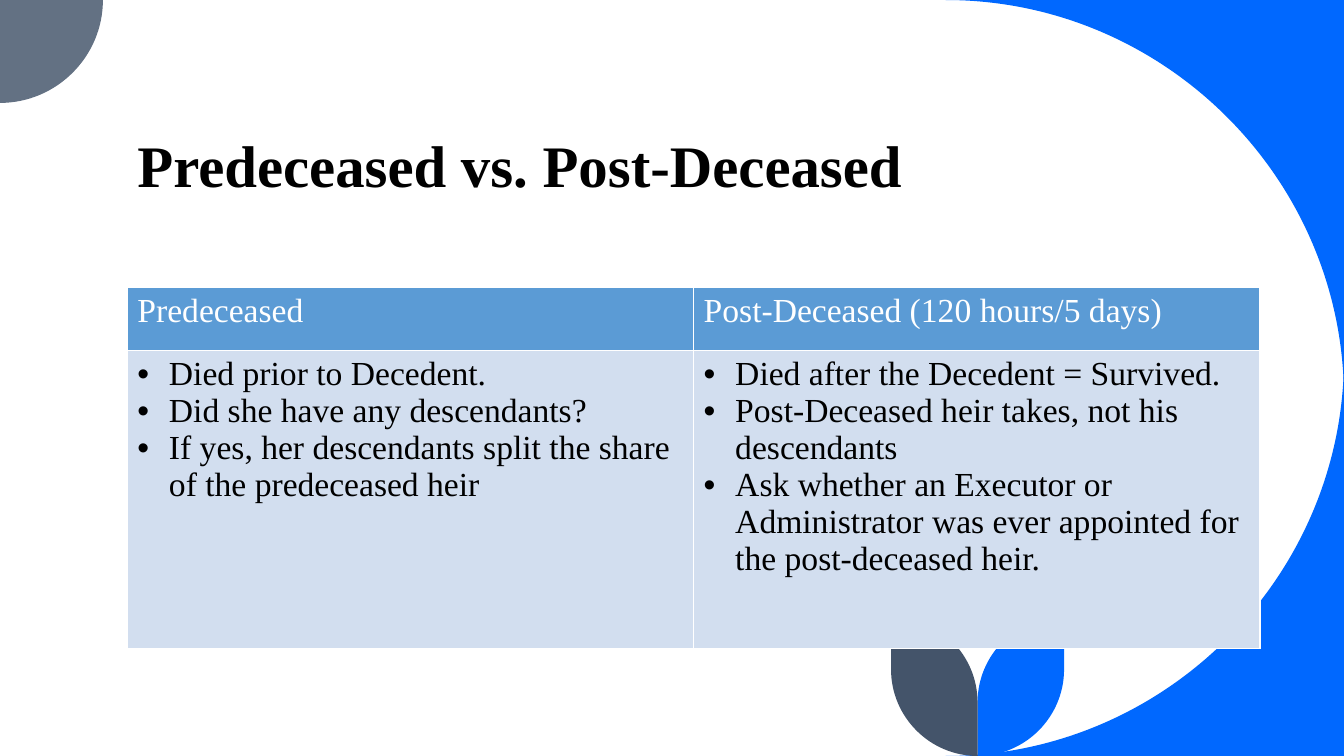
from lxml import etree
from pptx import Presentation
from pptx.dml.color import RGBColor
from pptx.enum.text import MSO_ANCHOR, PP_ALIGN
from pptx.oxml.ns import qn
from pptx.util import Pt

BOTTOM = MSO_ANCHOR.BOTTOM
LEFT = PP_ALIGN.LEFT
FONT = "Times New Roman"
WIDE, HIGH = 960, 540
BEND = 0.55
COLORS = {
    "blue": "0068FF",
    "gray": "637183",
    "slate": "44546A",
    "head": "5B9BD5",
    "body": "D2DEEF",
    "white": "FFFFFF",
    "black": "000000",
}
HEADS = ["Predeceased", "Post-Deceased (120 hours/5 days)"]
LISTS = [
    [
        "Died prior to Decedent.",
        "Did she have any descendants?",
        "If yes, her descendants split the share of the predeceased heir",
    ],
    [
        "Died after the Decedent = Survived.",
        "Post-Deceased heir takes, not his descendants",
        "Ask whether an Executor or Administrator was ever appointed for "
        "the post-deceased heir.",
    ],
]


def rgb(name):
    return RGBColor.from_string(COLORS[name])


def write(frame, lines, size=24, color="black", bold=False, space=None, bullet=False):
    for i, line in enumerate(lines):
        para = frame.paragraphs[0] if i == 0 else frame.add_paragraph()
        para.alignment = LEFT
        para.line_spacing = space
        run = para.add_run()
        run.text = line
        run.font.name = FONT
        run.font.size = Pt(size)
        run.font.bold = bold
        run.font.color.rgb = rgb(color)
        if bullet:
            props = para._p.get_or_add_pPr()
            props.set("marL", str(Pt(22.5)))
            props.set("indent", str(-Pt(22.5)))
            etree.SubElement(props, qn("a:buFont")).set("typeface", "Arial")
            etree.SubElement(props, qn("a:buChar")).set("char", "•")


def toward(dot, corner):
    return tuple(a + (b - a) * BEND for a, b in zip(dot, corner))


def curve(start, corner, end):
    return [toward(start, corner), toward(end, corner), end]


def draw(slide, start, steps, color):
    dots = [(Pt(x), Pt(y)) for step in steps for x, y in step]
    pen = slide.shapes.build_freeform(Pt(start[0]), Pt(start[1]))
    pen.add_line_segments(dots, close=True)
    shape = pen.convert_to_shape()
    lines = iter(list(shape._element.iter(qn("a:lnTo"))))
    for step in steps:
        group = [next(lines) for _ in step]
        if len(group) == 3:
            bend = etree.Element(qn("a:cubicBezTo"))
            group[0].addprevious(bend)
            for line in group:
                bend.append(line[0])
                line.getparent().remove(line)
    shape.shadow.inherit = False
    shape.fill.solid()
    shape.fill.fore_color.rgb = rgb(color)
    shape.line.fill.background()


def add_sweep(slide, x, y, width, height):
    radius = 284.5
    right = x + width
    for edge, turn in ((y, y + radius), (y + height, y + height - radius)):
        start, corner, end = (right - radius, edge), (right, edge), (right, turn)
        draw(slide, start, [curve(start, corner, end), [corner]], "blue")


def add_disc(slide, x, y, size):
    start, end = (x + size, y), (x, y + size)
    steps = [[start], curve(start, (x + size, y + size), end)]
    draw(slide, (x, y), steps, "gray")


def add_leaves(slide, x, y, width, height):
    size = width / 2
    mid, base = x + size, y + height
    for side, color in ((x + width, "blue"), (x, "slate")):
        top, tip = (side, y), (mid, base)
        bend, inner = (side, base - size), (mid, y + size)
        steps = [
            [bend],
            curve(bend, (side, base), tip),
            [inner],
            curve(inner, (mid, y), top),
        ]
        draw(slide, top, steps, color)


def add_title(slide, x, y, width, height):
    title = slide.shapes.title
    title.left, title.top = Pt(x), Pt(y)
    title.width, title.height = Pt(width), Pt(height)
    title.text_frame.word_wrap = True
    title.text_frame.vertical_anchor = BOTTOM
    write(title.text_frame, ["Predeceased vs. Post-Deceased"],
          size=42, bold=True, space=0.8)


def style(cell, color):
    props = cell._tc.get_or_add_tcPr()
    for side in ("lnL", "lnR", "lnT", "lnB"):
        line = etree.SubElement(props, qn("a:" + side), w=str(Pt(1)))
        fill = etree.SubElement(line, qn("a:solidFill"))
        etree.SubElement(fill, qn("a:srgbClr"), val=COLORS["white"])
    cell.fill.solid()
    cell.fill.fore_color.rgb = rgb(color)


def add_grid(slide, x, y, width, height):
    frame = slide.shapes.add_table(2, 2, Pt(x), Pt(y), Pt(width), Pt(height))
    grid = frame.table
    grid.rows[0].height = Pt(45)
    grid.rows[1].height = Pt(height - 45)
    for col, (head, items) in enumerate(zip(HEADS, LISTS)):
        grid.columns[col].width = Pt(width / 2)
        top, low = grid.cell(0, col), grid.cell(1, col)
        style(top, "head")
        style(low, "body")
        write(top.text_frame, [head], color="white")
        write(low.text_frame, items, bullet=True)


def main():
    deck = Presentation()
    deck.slide_width, deck.slide_height = Pt(WIDE), Pt(HIGH)
    slide = deck.slides.add_slide(deck.slide_layouts[5])
    add_sweep(slide, 0, 0, WIDE, HIGH)
    add_disc(slide, 0, 0, 73.5)
    add_leaves(slide, 636.5, 440, 123.6, 100)
    add_title(slide, 91, 8, 769.7, 137.4)
    add_grid(slide, 91, 205.2, 809, 258.2)
    deck.save("out.pptx")


if __name__ == "__main__":
    main()
